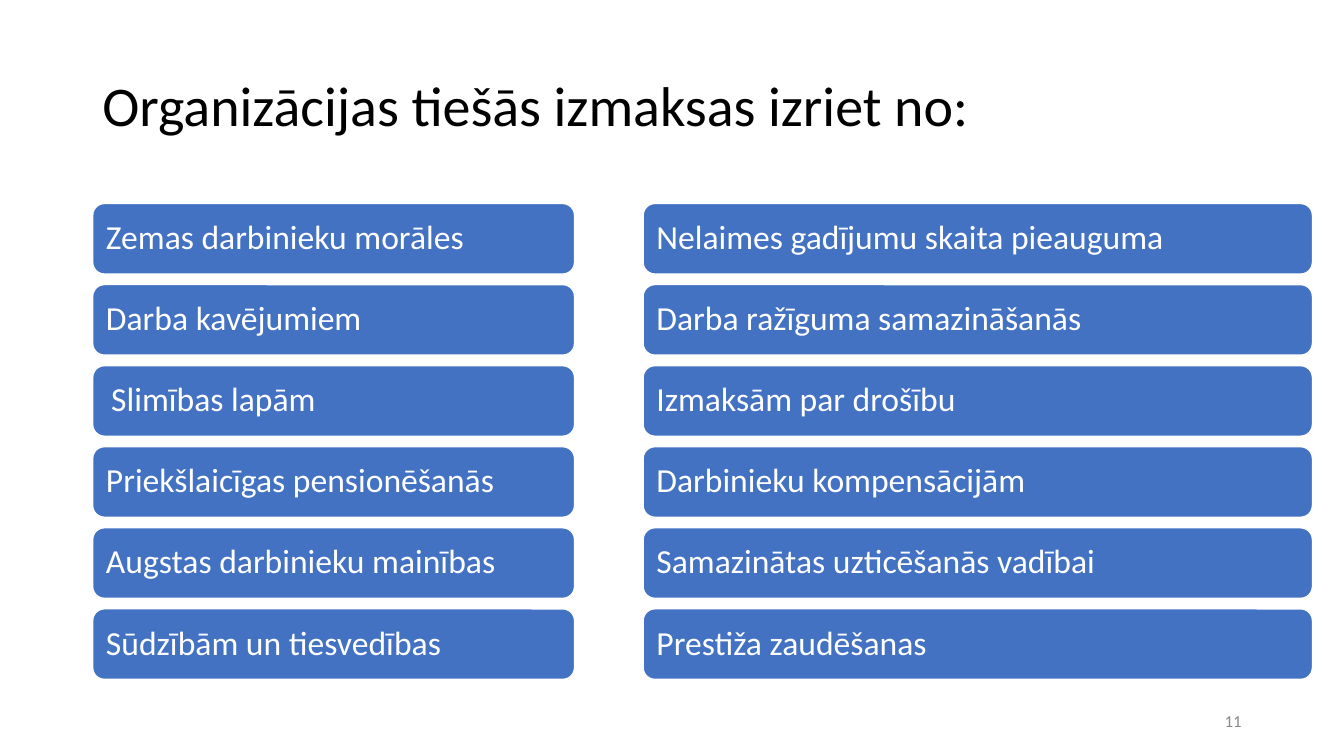
import dataclasses

import pptx
import pptx.dml.color
import pptx.enum.shapes
import pptx.enum.text
import pptx.presentation
import pptx.slide
import pptx.text.text
import pptx.util

Pt = pptx.util.Pt
ALIGN = pptx.enum.text.PP_ALIGN
COLORS = {"title": "000000", "bar": "4372C3", "bar_text": "FFFFFF", "number": "888888"}
BARS_TOP = 145.4
BAR_HEIGHT = 50.4
BAR_PITCH = 57.9
CORNER = 0.167


@dataclasses.dataclass(frozen=True)
class CostColumn:
    left: float
    width: float
    causes: tuple[str, ...]
    indents: dict[str, float] = dataclasses.field(default_factory=dict)


COST_COLUMNS = (
    CostColumn(66.2, 344.2, (
        "Zemas darbinieku morāles",
        "Darba kavējumiem",
        "Slimības lapām",
        "Priekšlaicīgas pensionēšanās",
        "Augstas darbinieku mainības",
        "Sūdzībām un tiesvedības",
    ), {"Slimības lapām": 3.6}),
    CostColumn(459.4, 478.1, (
        "Nelaimes gadījumu skaita pieauguma",
        "Darba ražīguma samazināšanās",
        "Izmaksām par drošību",
        "Darbinieku kompensācijām",
        "Samazinātas uzticēšanās vadībai",
        "Prestiža zaudēšanas",
    )),
)


def rgb(role: str) -> pptx.dml.color.RGBColor:
    return pptx.dml.color.RGBColor.from_string(COLORS[role])


def write_line(frame: pptx.text.text.TextFrame, text: str, size: float, role: str,
               align: ALIGN = ALIGN.LEFT, spacing: float = 0.9) -> None:
    """Fill a frame with one vertically centred paragraph."""
    frame.text = text
    frame.word_wrap = True
    frame.auto_size = pptx.enum.text.MSO_AUTO_SIZE.NONE
    frame.vertical_anchor = pptx.enum.text.MSO_ANCHOR.MIDDLE
    paragraph = frame.paragraphs[0]
    paragraph.alignment = align
    paragraph.line_spacing = spacing
    paragraph.font.name = "Calibri"
    paragraph.font.size = Pt(size)
    paragraph.font.color.rgb = rgb(role)


def add_title(slide: pptx.slide.Slide) -> None:
    title = slide.shapes.title
    title.left, title.top, title.width, title.height = Pt(66), Pt(25.2), Pt(828), Pt(104.4)
    write_line(title.text_frame, "Organizācijas tiešās izmaksas izriet no:", 40, "title")


def add_cost_column(slide: pptx.slide.Slide, column: CostColumn) -> None:
    for row, cause in enumerate(column.causes):
        bar = slide.shapes.add_shape(
            pptx.enum.shapes.MSO_SHAPE.ROUNDED_RECTANGLE,
            Pt(column.left), Pt(BARS_TOP + row * BAR_PITCH), Pt(column.width), Pt(BAR_HEIGHT))
        bar.adjustments[0] = CORNER
        bar.shadow.inherit = False
        bar.fill.solid()
        bar.fill.fore_color.rgb = rgb("bar")
        bar.line.color.rgb = rgb("bar_text")
        bar.line.width = Pt(1)
        bar.text_frame.margin_left = Pt(7.2 + column.indents.get(cause, 0))
        write_line(bar.text_frame, cause, 24, "bar_text")


def add_slide_number(slide: pptx.slide.Slide) -> None:
    number = slide.shapes.add_textbox(Pt(678), Pt(500.5), Pt(216), Pt(28.8))
    write_line(number.text_frame, "11", 12, "number", ALIGN.RIGHT, 1.0)


def main() -> None:
    presentation = pptx.Presentation()
    presentation.slide_width, presentation.slide_height = Pt(960), Pt(540)
    slide = presentation.slides.add_slide(presentation.slide_layouts[5])
    add_title(slide)
    for column in COST_COLUMNS:
        add_cost_column(slide, column)
    add_slide_number(slide)
    presentation.save("out.pptx")


if __name__ == "__main__":
    main()
